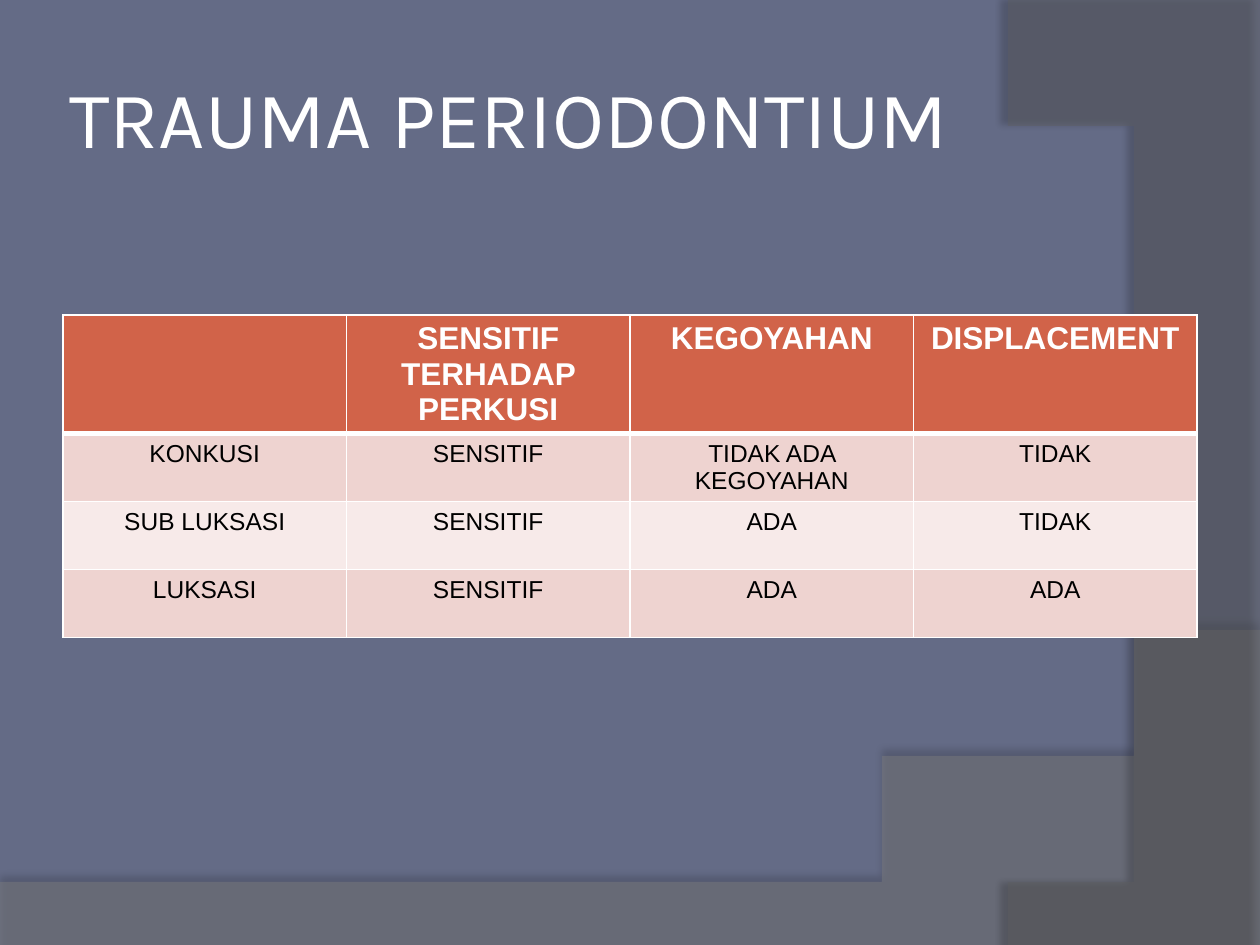
import lxml.etree
import pptx
import pptx.dml.color
import pptx.enum.text
import pptx.oxml
import pptx.oxml.ns
import pptx.util

Inches = pptx.util.Inches
RGBColor = pptx.dml.color.RGBColor
qn = pptx.oxml.ns.qn

WHITE = RGBColor(0xFF, 0xFF, 0xFF)
BLACK = RGBColor(0x00, 0x00, 0x00)
SLATE = RGBColor(0x64, 0x6B, 0x86)
GREY = RGBColor(0x7F, 0x7F, 0x7F)
DARK_GREY = RGBColor(0x5E, 0x5E, 0x5E)
ORANGE = RGBColor(0xD1, 0x63, 0x49)
ROSE = RGBColor(0xEE, 0xD3, 0xD0)
PALE_ROSE = RGBColor(0xF7, 0xEA, 0xE9)

WIDTH, HEIGHT = 10, 7.5
MARGIN = 0.05 * WIDTH
CURVE_STEPS = 60


def write(frame, text, *, font, size, color, bold=False, align="LEFT"):
    para = frame.paragraphs[0]
    para.alignment = getattr(pptx.enum.text.PP_ALIGN, align)
    span = para.add_run()
    span.text = text
    span.font.name = font
    span.font.size = pptx.util.Pt(size)
    span.font.bold = bold
    span.font.color.rgb = color


def add_border(cell, side, points):
    line = lxml.etree.SubElement(
        cell._tc.get_or_add_tcPr(), qn(f"a:ln{side}"), w=str(pptx.util.Pt(points)))
    fill = lxml.etree.SubElement(line, qn("a:solidFill"))
    lxml.etree.SubElement(fill, qn("a:srgbClr"), val=str(WHITE))


deck = pptx.Presentation()
deck.slide_width, deck.slide_height = Inches(WIDTH), Inches(HEIGHT)
page = deck.slides.add_slide(deck.slide_layouts[5])
page.background.fill.solid()
page.background.fill.fore_color.rgb = SLATE

# Background waves: straight corners, then one cubic curve from the last corner.
waves = [
    dict(corners=[(0, 7.05), (0, 7.51), (10, 7.51), (10, 5.2)],
         curve=[(5.59, 7.29), (3.91, 7.19), (0, 7.05)],
         color=GREY, opacity=45, shadow=35, distance=3.5, angle=270),
    dict(corners=[(10, 0.02), (10, 7.5), (8.21, 7.5)],
         curve=[(9.35, 6.19), (10.18, 3), (8, 0)],
         color=DARK_GREY, opacity=40, shadow=45, distance=4, angle=180),
]
for wave in waves:
    outline = list(wave["corners"])
    controls = [outline[-1], *wave["curve"]]
    for step in range(1, CURVE_STEPS + 1):
        t = step / CURVE_STEPS
        weights = ((1 - t) ** 3, 3 * t * (1 - t) ** 2, 3 * t ** 2 * (1 - t), t ** 3)
        outline.append(tuple(
            sum(weight * point[axis] for weight, point in zip(weights, controls))
            for axis in (0, 1)))
    builder = page.shapes.build_freeform(*outline[0], scale=Inches(1))
    builder.add_line_segments(outline[1:], close=True)
    shape = builder.convert_to_shape()
    shape.fill.solid()
    shape.fill.fore_color.rgb = wave["color"]
    shape.line.fill.background()
    tint = shape.element.spPr.find(qn("a:solidFill"))[0]
    lxml.etree.SubElement(tint, qn("a:alpha"), val=str(wave["opacity"] * 1000))
    shape.shadow.inherit = False
    shadow = lxml.etree.SubElement(
        shape.element.spPr.find(qn("a:effectLst")), qn("a:outerShdw"),
        blurRad=str(pptx.util.Pt(4)), dist=str(pptx.util.Pt(wave["distance"])),
        dir=str(wave["angle"] * 60000), algn="ctr", rotWithShape="0")
    shade = lxml.etree.SubElement(shadow, qn("a:srgbClr"), val=str(BLACK))
    lxml.etree.SubElement(shade, qn("a:alpha"), val=str(wave["shadow"] * 1000))

title = page.shapes.title
page.shapes.element.append(title.element)  # in front of the waves
title.left, title.top = Inches(MARGIN), Inches(0.3)
title.width, title.height = Inches(8.17), Inches(1.25)
frame = title.text_frame
frame.word_wrap = True
frame.vertical_anchor = pptx.enum.text.MSO_ANCHOR.MIDDLE
frame.margin_left = frame.margin_right = Inches(0.05)
frame.margin_top = frame.margin_bottom = Inches(0.05)
write(frame, "TRAUMA PERIODONTIUM", font="Karla", size=46, color=WHITE)

rows = [
    ["", "SENSITIF TERHADAP PERKUSI", "KEGOYAHAN", "DISPLACEMENT"],
    ["KONKUSI", "SENSITIF", "TIDAK ADA KEGOYAHAN", "TIDAK"],
    ["SUB LUKSASI", "SENSITIF", "ADA", "TIDAK"],
    ["LUKSASI", "SENSITIF", "ADA", "ADA"],
]
heights = [0.94] + [0.54] * 3
table = page.shapes.add_table(
    len(rows), len(rows[0]), Inches(MARGIN), Inches(HEIGHT / 3),
    Inches(WIDTH - 2 * MARGIN), Inches(sum(heights))).table
for row, texts in enumerate(rows):
    table.rows[row].height = Inches(heights[row])
    header = row == 0
    for column, text in enumerate(texts):
        cell = table.cell(row, column)
        for side in "LRTB":
            under_header = (row, side) in [(0, "B"), (1, "T")]
            add_border(cell, side, 3 if under_header else 1)
        cell.fill.solid()
        cell.fill.fore_color.rgb = ORANGE if header else ROSE if row % 2 else PALE_ROSE
        if text:
            write(cell.text_frame, text, font="Arial", size=18 if header else 14,
                  color=WHITE if header else BLACK, bold=header, align="CENTER")

deck.save("out.pptx")
